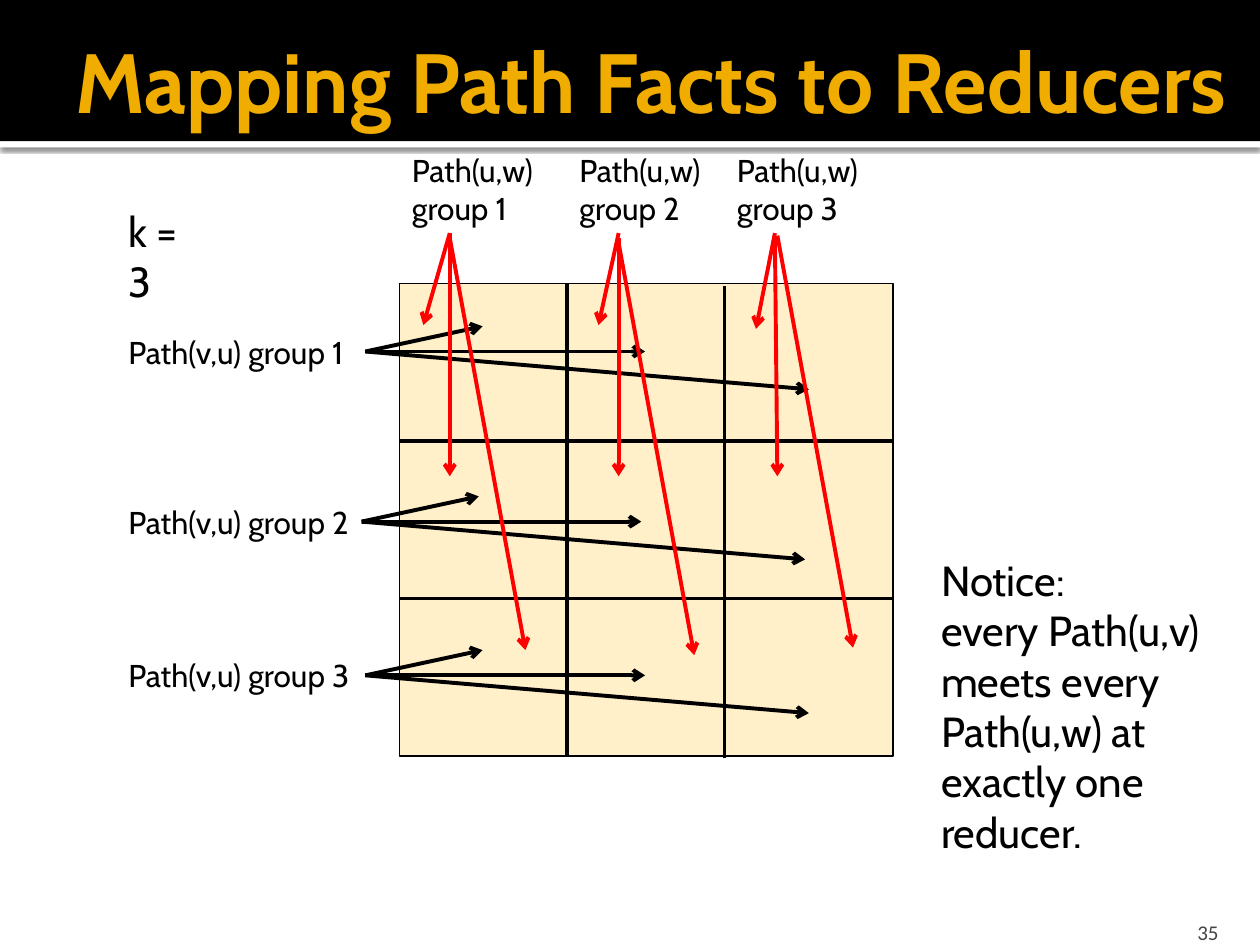
from dataclasses import dataclass

from lxml import etree
from pptx import Presentation
from pptx.dml.color import RGBColor
from pptx.enum.shapes import MSO_CONNECTOR, MSO_SHAPE
from pptx.enum.text import MSO_ANCHOR, PP_ALIGN
from pptx.oxml.ns import qn
from pptx.util import Inches, Pt

STRAIGHT = MSO_CONNECTOR.STRAIGHT
RECTANGLE = MSO_SHAPE.RECTANGLE
TOP, MIDDLE, BOTTOM = MSO_ANCHOR.TOP, MSO_ANCHOR.MIDDLE, MSO_ANCHOR.BOTTOM
LEFT, RIGHT = PP_ALIGN.LEFT, PP_ALIGN.RIGHT

COLORS = {
    "black": "000000",
    "white": "FFFFFF",
    "gold": "F0AD00",
    "cream": "FFF0C9",
    "red": "FF0000",
    "gray": "454545",
}
Point = tuple[float, float]
Box = tuple[float, float, float, float]


@dataclass
class PathGroup:
    """A label and the arrows from it to the reducers it is sent to."""
    label: str
    box: Box
    arrows: list[tuple[Point, Point]]
    color: str


def rgb(name: str) -> RGBColor:
    return RGBColor.from_string(COLORS[name])


def add_text(shapes, text: str, box: Box, *, size: float = 18, font: str = "Cabin",
             color: str = "black", bold: bool = False, align=LEFT, anchor=TOP,
             wrap: bool = False, insets: Box = (0.1, 0.05, 0.1, 0.05)) -> None:
    frame = shapes.add_textbox(*map(Inches, box)).text_frame
    frame.word_wrap = wrap
    frame.vertical_anchor = anchor
    (frame.margin_left, frame.margin_top,
     frame.margin_right, frame.margin_bottom) = map(Inches, insets)
    frame.text = text
    for paragraph in frame.paragraphs:
        paragraph.alignment = align
        for run in paragraph.runs:
            run.font.size = Pt(size)
            run.font.name = font
            run.font.bold = bold
            run.font.color.rgb = rgb(color)


def add_rectangle(shapes, box: Box, fill: str, outline: str = ""):
    rectangle = shapes.add_shape(RECTANGLE, *map(Inches, box))
    rectangle.shadow.inherit = False
    rectangle.fill.solid()
    rectangle.fill.fore_color.rgb = rgb(fill)
    if outline:
        rectangle.line.color.rgb = rgb(outline)
        rectangle.line.width = Pt(1)
    else:
        rectangle.line.fill.background()
    return rectangle


def add_drop_shadow(shape) -> None:
    effects = shape._element.spPr.find(qn("a:effectLst"))
    shadow = etree.SubElement(effects, qn("a:outerShdw"), blurRad=str(Pt(2.5)),
                              dist=str(Pt(0.8)), dir="5400000", algn="tl", rotWithShape="0")
    shade = etree.SubElement(shadow, qn("a:srgbClr"), val=COLORS["black"])
    etree.SubElement(shade, qn("a:alpha"), val="60000")


def add_line(shapes, start: Point, end: Point, color: str = "black",
             arrow: bool = False) -> None:
    connector = shapes.add_connector(STRAIGHT, *map(Inches, (*start, *end)))
    connector.line.color.rgb = rgb(color)
    connector.line.width = Pt(2.25)
    properties = connector._element.spPr
    if arrow:
        etree.SubElement(properties.find(qn("a:ln")), qn("a:tailEnd"), type="arrow")
    etree.SubElement(properties, qn("a:effectLst"))


def add_path_group(shapes, group: PathGroup) -> None:
    members = shapes.add_group_shape().shapes
    add_text(members, group.label, group.box)
    for start, end in group.arrows:
        add_line(members, start, end, group.color, arrow=True)


def row_groups() -> list[PathGroup]:
    reaches = [(0.93, -0.2), (2.22, 0), (3.52, 0.3)]
    origins = [(2.9, 2.79), (2.87, 4.14), (2.9, 5.36)]
    return [
        PathGroup(f"Path(v,u) group {number}", (0.92, y - 0.2, 1.98, 0.4),
                  [((x, y), (x + dx, y + dy)) for dx, dy in reaches], "black")
        for number, (x, y) in enumerate(origins, 1)
    ]


def column_groups() -> list[PathGroup]:
    columns = [
        (3.17, [((3.57, 1.85), (3.36, 2.58)), ((3.57, 1.85), (3.57, 3.78)),
                ((3.57, 1.89), (4.17, 5.16))]),
        (4.5, [((4.91, 1.85), (4.75, 2.58)), ((4.91, 1.89), (4.91, 3.78)),
               ((4.91, 1.93), (5.51, 5.2))]),
        (5.75, [((6.15, 1.85), (6, 2.61)), ((6.15, 1.89), (6.17, 3.78)),
                ((6.17, 1.87), (6.77, 5.14))]),
    ]
    return [
        PathGroup(f"Path(u,w)\ngroup {number}", (left, 1.15, 1.22, 0.71), arrows, "red")
        for number, (left, arrows) in enumerate(columns, 1)
    ]


def main() -> None:
    presentation = Presentation()
    presentation.slide_width, presentation.slide_height = Inches(10), Inches(7.5)
    shapes = presentation.slides.add_slide(presentation.slide_layouts[6]).shapes

    # Title band
    add_drop_shadow(add_rectangle(shapes, (0, 1.12, 10, 0.05), "white"))
    add_rectangle(shapes, (0, 0, 10, 1.12), "black")
    add_text(shapes, "Mapping Path Facts to Reducers", (0.5, 0.17, 9.5, 0.92), size=48,
             color="gold", bold=True, anchor=MIDDLE, wrap=True,
             insets=(0.1, 0.05, 0.05, 0.05))

    # Slide number
    add_text(shapes, "35", (8.97, 7.2, 0.8, 0.3), size=12, font="Calibri", color="gray",
             align=RIGHT, anchor=BOTTOM, wrap=True, insets=(0.1, 0.05, 0.1, 0))

    # Reducer grid
    add_rectangle(shapes, (3.17, 2.25, 3.92, 3.75), "cream", "black")
    for x, top in ((4.5, 2.25), (5.75, 2.27)):
        add_line(shapes, (x, top), (x, top + 3.75))
    for y in (3.5, 4.75):
        add_line(shapes, (3.17, y), (7.08, y))

    # Path facts sent to each row and column
    for group in row_groups() + column_groups():
        add_path_group(shapes, group)

    # Remarks
    add_text(shapes, "k = 3", (0.92, 1.58, 0.82, 0.5), size=24, wrap=True)
    add_text(shapes, "Notice:\nevery Path(u,v)\nmeets every\nPath(u,w) at\nexactly one\nreducer.",
             (7.37, 4.35, 2.31, 2.52), size=24)

    presentation.save("out.pptx")


if __name__ == "__main__":
    main()
